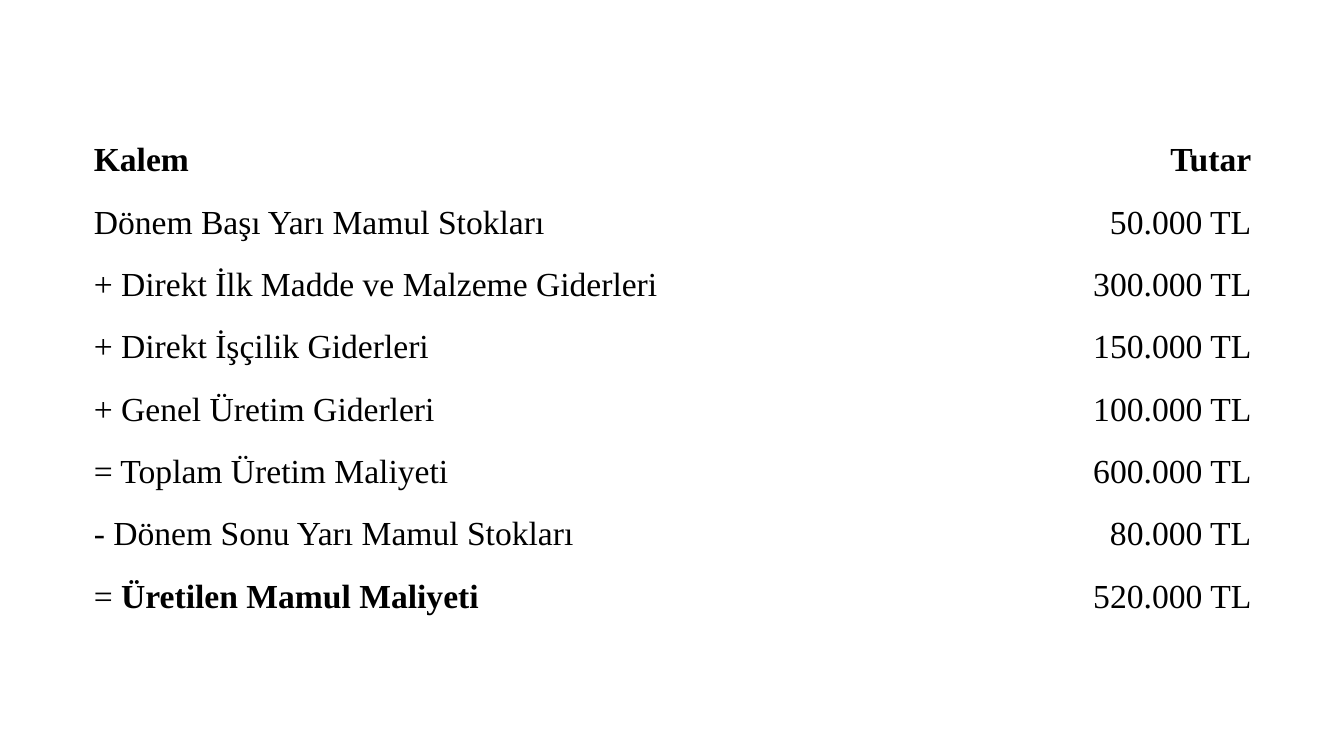
"""Builds a slide with a table of production costs."""
from pptx import Presentation
from pptx.dml.color import RGBColor
from pptx.enum.text import MSO_ANCHOR, PP_ALIGN
from pptx.util import Inches, Pt

MIDDLE = MSO_ANCHOR.MIDDLE
ALIGNS = (PP_ALIGN.JUSTIFY, PP_ALIGN.RIGHT)
FONT, SIZE, INK = "Times New Roman", 24, "000000"
LEFT, TOP, HEIGHT = 0.92, 1.27, 4.95
WIDTHS = (9.51, 1.99)
INSET = Inches(0.01)

HEAD = ("Kalem", "Tutar")
COSTS = [
    ("Dönem Başı Yarı Mamul Stokları", "50.000 TL"),
    ("+ Direkt İlk Madde ve Malzeme Giderleri", "300.000 TL"),
    ("+ Direkt İşçilik Giderleri", "150.000 TL"),
    ("+ Genel Üretim Giderleri", "100.000 TL"),
    ("= Toplam Üretim Maliyeti", "600.000 TL"),
    ("- Dönem Sonu Yarı Mamul Stokları", "80.000 TL"),
]
SIGN, RESULT, TOTAL = "= ", "Üretilen Mamul Maliyeti", "520.000 TL"

ROWS = [
    [[(text, True)] for text in HEAD],
    *[[[(text, False)] for text in cost] for cost in COSTS],
    [[(SIGN, False), (RESULT, True)], [(TOTAL, False)]],
]


def color(code):
    return RGBColor.from_string(code)


def fill_cell(cell, parts, align):
    cell.fill.background()
    cell.vertical_anchor = MIDDLE
    cell.margin_left = cell.margin_right = INSET
    cell.margin_top = cell.margin_bottom = INSET
    para = cell.text_frame.paragraphs[0]
    para.alignment = align
    para.line_spacing = 1.07
    for text, bold in parts:
        run = para.add_run()
        run.text = text
        font = run.font
        font.name, font.size, font.bold = FONT, Pt(SIZE), bold
        font.color.rgb = color(INK)


def main():
    deck = Presentation()
    deck.slide_width, deck.slide_height = Inches(13.33), Inches(7.5)
    slide = deck.slides.add_slide(deck.slide_layouts[6])
    frame = slide.shapes.add_table(
        len(ROWS), len(WIDTHS), Inches(LEFT), Inches(TOP),
        Inches(sum(WIDTHS)), Inches(HEIGHT))
    table = frame.table
    table.first_row = table.horz_banding = False
    for column, width in zip(table.columns, WIDTHS):
        column.width = Inches(width)
    for r, row in enumerate(ROWS):
        for c, parts in enumerate(row):
            fill_cell(table.cell(r, c), parts, ALIGNS[c])
    deck.save("out.pptx")


if __name__ == "__main__":
    main()
